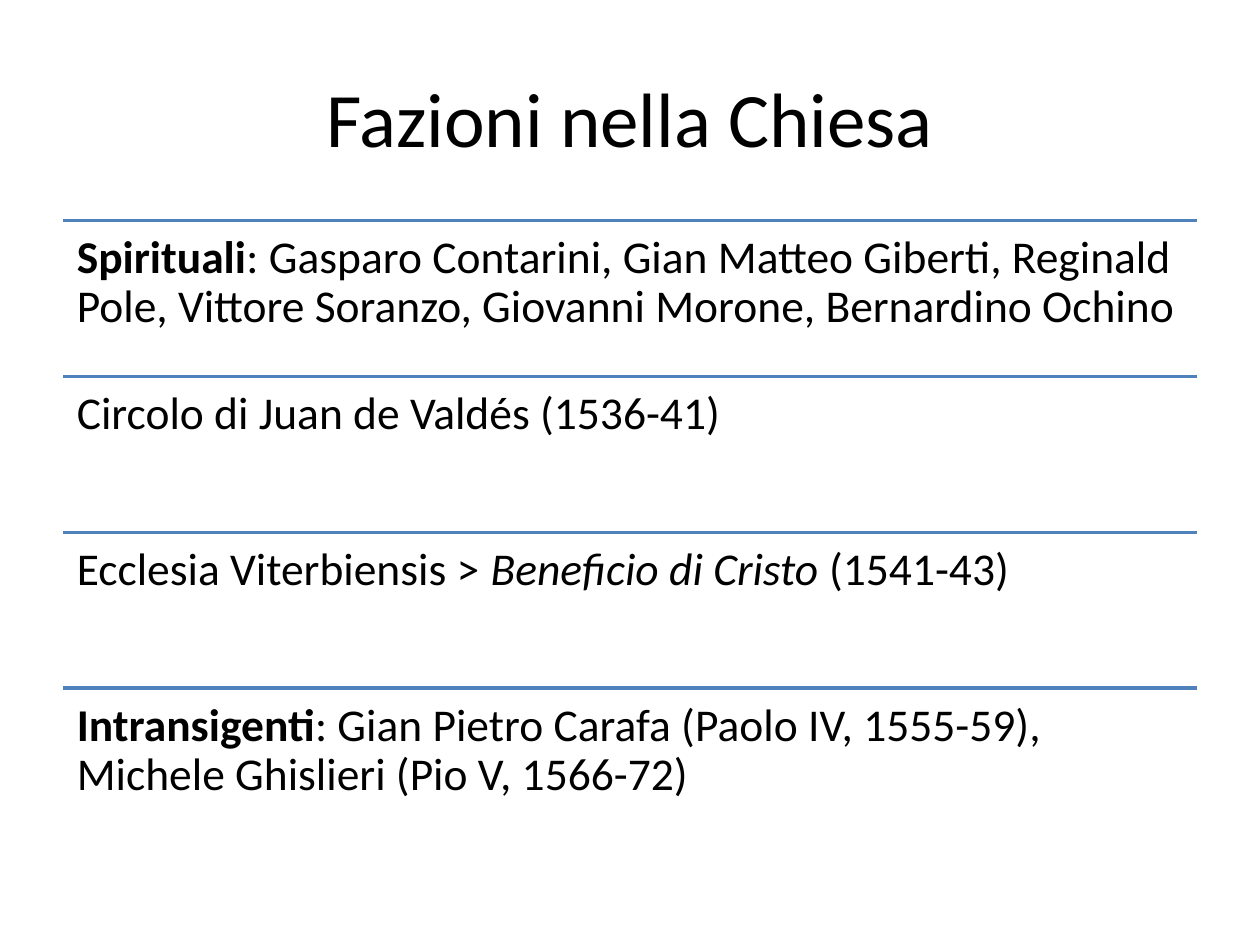
from dataclasses import dataclass

from lxml import etree
from pptx import Presentation
from pptx import util as u
from pptx.dml.color import RGBColor
from pptx.enum import shapes, text
from pptx.oxml import ns


@dataclass(frozen=True)
class Theme:
    font: str = "Calibri"
    ink: str = "000000"
    rule: str = "4F81BD"
    paper: str = "FFFFFF"
    title_size: int = 44
    body_size: int = 26
    rule_width: int = 2


def add_run(paragraph, wording, *, font, size, color, bold=False, italic=False):
    run = paragraph.add_run()
    run.text = wording
    run.font.name = font
    run.font.size = u.Pt(size)
    run.font.color.rgb = RGBColor.from_string(color)
    run.font.bold = bold
    run.font.italic = italic


class SlideBuilder:
    """Places elements by shares of the slide's width and height."""

    def __init__(self, deck, theme):
        self.deck = deck
        self.theme = theme
        self.slide = deck.slides.add_slide(deck.slide_layouts[6])
        fill = self.slide.background.fill
        fill.solid()
        fill.fore_color.rgb = RGBColor.from_string(theme.paper)

    def x(self, share):
        return round(self.deck.slide_width * share)

    def y(self, share):
        return round(self.deck.slide_height * share)

    def textbox(self, left, top, width, height, runs, size, inset=None,
                anchor=text.MSO_ANCHOR.TOP, align=text.PP_ALIGN.LEFT):
        box = self.slide.shapes.add_textbox(
            self.x(left), self.y(top), self.x(width), self.y(height))
        frame = box.text_frame
        frame.word_wrap = True
        frame.vertical_anchor = anchor
        if inset is not None:
            frame.margin_left = frame.margin_right = u.Inches(inset)
            frame.margin_top = frame.margin_bottom = u.Inches(inset)
        paragraph = frame.paragraphs[0]
        paragraph.alignment = align
        for wording, style in runs:
            add_run(paragraph, wording, font=self.theme.font, size=size,
                    color=self.theme.ink, **style)
        return paragraph

    def title(self, left, top, width, height, wording):
        self.textbox(left, top, width, height, [(wording, {})],
                     self.theme.title_size, anchor=text.MSO_ANCHOR.MIDDLE,
                     align=text.PP_ALIGN.CENTER)

    def rule(self, left, top, width):
        line = self.slide.shapes.add_connector(
            shapes.MSO_CONNECTOR.STRAIGHT, self.x(left), self.y(top),
            self.x(left + width), self.y(top))
        line.line.color.rgb = RGBColor.from_string(self.theme.rule)
        line.line.width = u.Pt(self.theme.rule_width)
        # An empty effect list removes the connector's shadow
        etree.SubElement(line._element.spPr, ns.qn("a:effectLst"))

    def entry(self, left, top, width, height, runs):
        self.rule(left, top, width)
        paragraph = self.textbox(left, top, width, height, runs,
                                 self.theme.body_size, inset=0.11)
        paragraph.line_spacing = 0.9
        paragraph.space_after = u.Pt(9)


BOLD, ITALIC, PLAIN = {"bold": True}, {"italic": True}, {}

FACTIONS = [
    [("Spirituali", BOLD),
     (": Gasparo Contarini, Gian Matteo Giberti, Reginald Pole, "
      "Vittore Soranzo, Giovanni Morone, Bernardino Ochino", PLAIN)],
    [("Circolo di Juan de Valdés (1536-41)", PLAIN)],
    [("Ecclesia Viterbiensis > ", PLAIN),
     ("Beneficio di Cristo", ITALIC),
     (" (1541-43)", PLAIN)],
    [("Intransigenti", BOLD),
     (": Gian Pietro Carafa (Paolo IV, 1555-59), "
      "Michele Ghislieri (Pio V, 1566-72)", PLAIN)],
]


def main():
    deck = Presentation()
    deck.slide_width, deck.slide_height = u.Inches(10), u.Inches(7.5)
    builder = SlideBuilder(deck, Theme())
    margin, content_width = 0.05, 0.9

    # Heading
    builder.title(margin, 0.04, content_width, 1.25 / 7.5,
                  "Fazioni nella Chiesa")

    # Equal rows, each opened by a rule
    list_top, list_height = 1.75 / 7.5, 0.66
    row_height = list_height / len(FACTIONS)
    for row, faction in enumerate(FACTIONS):
        builder.entry(margin, list_top + row * row_height,
                      content_width, row_height, faction)

    deck.save("out.pptx")


if __name__ == "__main__":
    main()
